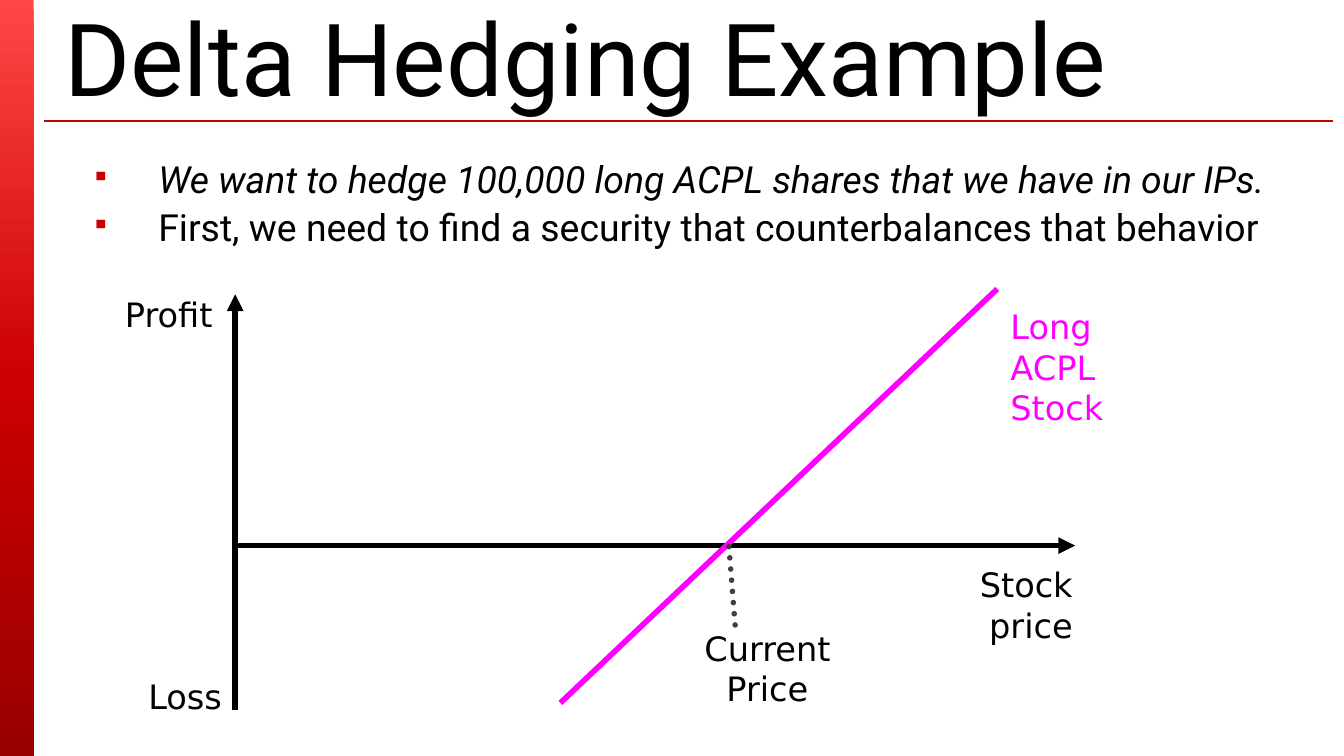
from copy import deepcopy
from dataclasses import dataclass

from lxml.etree import SubElement
from pptx import Presentation
from pptx.dml.color import RGBColor
from pptx.enum.dml import MSO_LINE
from pptx.enum.shapes import MSO_CONNECTOR, MSO_SHAPE
from pptx.enum.text import MSO_ANCHOR, PP_ALIGN
from pptx.oxml.ns import qn
from pptx.slide import Slide
from pptx.text.text import TextFrame
from pptx.util import Inches, Pt

SLIDE_WIDTH = 10
SLIDE_HEIGHT = SLIDE_WIDTH * 9 / 16
BLACK, RED, MAGENTA, GREY = "000000", "CC0000", "FF00FF", "404040"
HEADING_FONT, LABEL_FONT = "Roboto", "DejaVu Sans"
AXIS_LEFT, AXIS_LEVEL = 1.75, 4.06


@dataclass
class Line:
    start: tuple[float, float]
    end: tuple[float, float]
    color: str = BLACK
    width: float = 3
    arrow: bool = False
    dotted: bool = False


@dataclass
class Label:
    text: str
    left: float
    top: float
    width: float
    height: float
    align: PP_ALIGN = PP_ALIGN.RIGHT
    color: str = BLACK


RULE = Line((0.33, 0.9), (9.92, 0.9), "C80000", 0.75)
CHART_LINES = [
    Line((AXIS_LEFT, 5.28), (AXIS_LEFT, 2.19), arrow=True),
    Line((AXIS_LEFT, AXIS_LEVEL), (8, AXIS_LEVEL), arrow=True),
    Line((4.17, 5.23), (7.42, 2.15), MAGENTA),
    Line((5.47, 4.65), (5.42, 4.02), GREY, dotted=True),
]
LABELS = [
    Label("Stock price", 7, 4.15, 1.08, 0.71),
    Label("Long ACPL Stock", 7.42, 2.23, 1.5, 1.01, PP_ALIGN.LEFT, MAGENTA),
    Label("Current Price", 5, 4.62, 1.42, 0.71, PP_ALIGN.CENTER),
    Label("Profit", 0.51, 2.14, 1.17, 0.4),
    Label("Loss", 0.58, 4.98, 1.17, 0.4),
]
# Each bullet is its text and whether it is italic.
BULLETS = [
    ("We want to hedge 100,000 long ACPL shares that we have in our IPs.", True),
    ("First, we need to find a security that counterbalances that behavior", False),
]


def rgb(color: str) -> RGBColor:
    return RGBColor.from_string(color)


def set_font(font, name: str, size: float, color: str) -> None:
    font.name, font.size = name, Pt(size)
    font.color.rgb = rgb(color)


def add_text_frame(slide: Slide, left: float, top: float,
                   width: float, height: float) -> TextFrame:
    box = slide.shapes.add_textbox(Inches(left), Inches(top),
                                   Inches(width), Inches(height))
    box.text_frame.word_wrap = True
    return box.text_frame


def draw_side_bar(slide: Slide) -> None:
    bar = slide.shapes.add_shape(MSO_SHAPE.RECTANGLE, 0, 0,
                                 Inches(0.25), Inches(SLIDE_HEIGHT))
    bar.shadow.inherit = False
    bar.line.fill.background()
    bar.fill.gradient()
    bar.fill.gradient_angle = 270
    stop_list = bar._element.spPr.find(".//" + qn("a:gsLst"))
    stop_list.append(deepcopy(stop_list[-1]))
    colors = ("FF4747", RED, "990000")
    for stop, position, color in zip(bar.fill.gradient_stops, (0, 0.5, 1), colors):
        stop.position = position
        stop.color.rgb = rgb(color)


def draw_line(slide: Slide, line: Line) -> None:
    ends = [Inches(value) for value in (*line.start, *line.end)]
    connector = slide.shapes.add_connector(MSO_CONNECTOR.STRAIGHT, *ends)
    connector.line.color.rgb = rgb(line.color)
    connector.line.width = Pt(line.width)
    properties = connector._element.spPr
    outline = properties.find(qn("a:ln"))
    if line.dotted:
        connector.line.dash_style = MSO_LINE.ROUND_DOT
        outline.set("cap", "rnd")
    if line.arrow:
        SubElement(outline, qn("a:tailEnd"), type="triangle")
    SubElement(properties, qn("a:effectLst"))


def draw_label(slide: Slide, label: Label) -> None:
    frame = add_text_frame(slide, label.left, label.top, label.width, label.height)
    para = frame.paragraphs[0]
    para.text, para.alignment = label.text, label.align
    set_font(para.font, LABEL_FONT, 18, label.color)


def draw_title(slide: Slide) -> None:
    frame = add_text_frame(slide, 0.38, 0.15, 9.58, 0.53)
    frame.vertical_anchor = MSO_ANCHOR.MIDDLE
    para = frame.paragraphs[0]
    para.text = "Delta Hedging Example"
    set_font(para.font, HEADING_FONT, 54, BLACK)


def draw_bullets(slide: Slide) -> None:
    frame = add_text_frame(slide, 0.58, 1.15, 9.42, 1.25)
    for index, (text, italic) in enumerate(BULLETS):
        para = frame.add_paragraph() if index else frame.paragraphs[0]
        para.text = text
        para.line_spacing, para.space_before = 0.9, Pt(4)
        set_font(para.font, HEADING_FONT, 20, BLACK)
        para.font.italic = italic
        properties = para._p.get_or_add_pPr()
        properties.set("marL", str(Inches(0.5)))
        properties.set("indent", str(Inches(-0.5)))
        # The bullet elements belong before the default run properties.
        run_defaults = properties.find(qn("a:defRPr"))
        bullet_color = SubElement(properties, qn("a:buClr"))
        SubElement(bullet_color, qn("a:srgbClr"), val=RED)
        bullet_size = SubElement(properties, qn("a:buSzPct"), val="70000")
        bullet = SubElement(properties, qn("a:buChar"), char="▪")
        for element in (bullet_color, bullet_size, bullet):
            run_defaults.addprevious(element)


def main() -> None:
    deck = Presentation()
    deck.slide_width, deck.slide_height = Inches(SLIDE_WIDTH), Inches(SLIDE_HEIGHT)
    slide = deck.slides.add_slide(deck.slide_layouts[6])
    draw_side_bar(slide)
    draw_line(slide, RULE)
    draw_title(slide)
    draw_bullets(slide)
    for line in CHART_LINES:
        draw_line(slide, line)
    for label in LABELS:
        draw_label(slide, label)
    deck.save("out.pptx")


if __name__ == "__main__":
    main()
